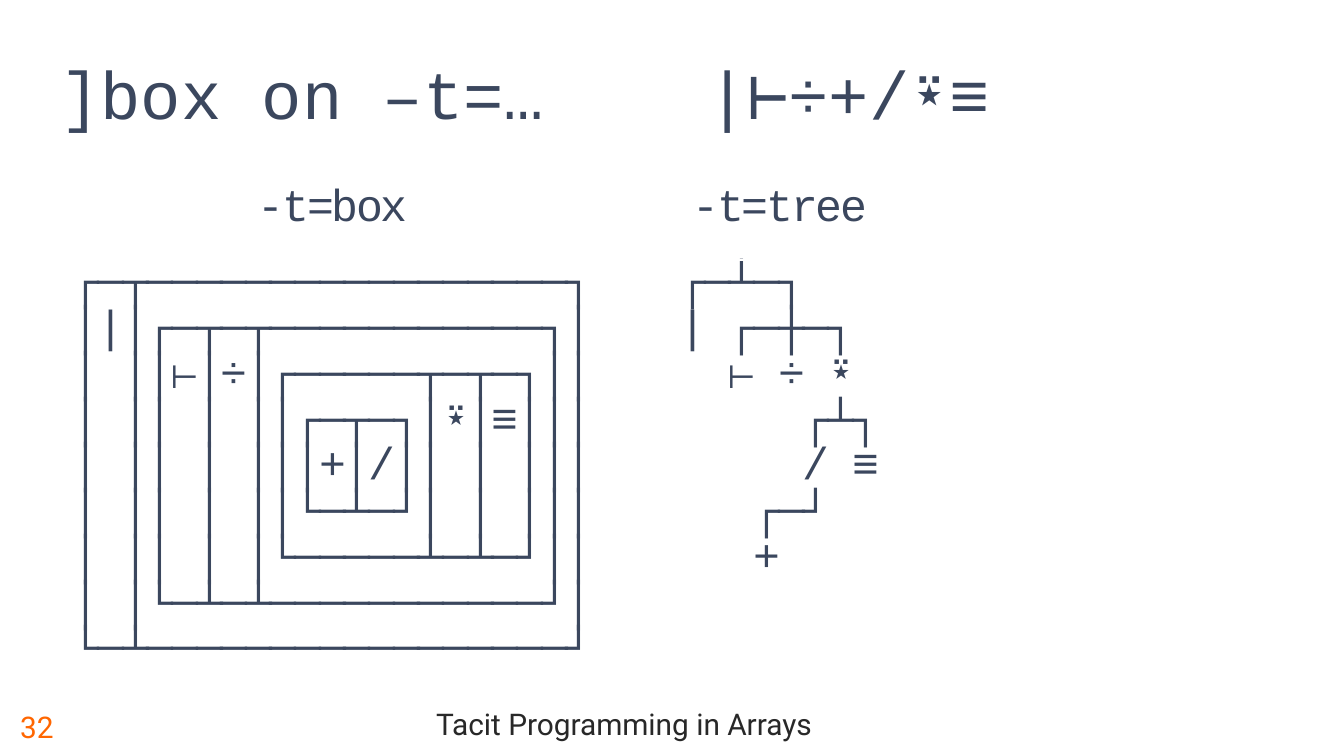
from pptx import Presentation
from pptx import util as u
from pptx.dml.color import RGBColor
from pptx.enum import text
from pptx.oxml import parse_xml
from pptx.oxml.ns import nsdecls

COLORS = {"ink": "3B475E", "footer": "282828", "number": "FF6600"}
CODE_FONT = "Courier New"
BODY_FONT = "Roboto"

BOX_VIEW = """\
┌─┬─────────────────┐
│|│┌─┬─┬───────────┐│
│ ││⊢│÷│┌─────┬─┬─┐││
│ ││ │ ││┌─┬─┐│⍣│≡│││
│ ││ │ │││+│/││ │ │││
│ ││ │ ││└─┴─┘│ │ │││
│ ││ │ │└─────┴─┴─┘││
│ │└─┴─┴───────────┘│
└─┴─────────────────┘""".split("\n")

TREE_VIEW = """\
 ┌─┴─┐
 | ┌─┼─┐
   ⊢ ÷ ⍣
      ┌┴┐
      / ≡
    ┌─┘
    +""".split("\n")


def style(para, font, size, color):
    """Set the font of a whole paragraph."""
    para.font.name = font
    para.font.size = u.Pt(size)
    para.font.color.rgb = RGBColor.from_string(COLORS[color])


def add_label(page, box, words, font, size, color,
              anchor=text.MSO_ANCHOR.MIDDLE, align=text.PP_ALIGN.LEFT, tab=None):
    """Add one line of text in a box given in centimetres."""
    frame = page.shapes.add_textbox(*map(u.Cm, box)).text_frame
    frame.word_wrap = True
    frame.vertical_anchor = anchor
    para = frame.paragraphs[0]
    para.text = words
    para.alignment = align
    if tab:
        para._p.get_or_add_pPr().append(parse_xml(
            f'<a:tabLst {nsdecls("a")}><a:tab pos="{u.Cm(tab)}" algn="r"/></a:tabLst>'))
    style(para, font, size, color)
    return para


def add_title(page, box):
    """Add the command and its right-tabbed expression."""
    para = add_label(page, box, "", CODE_FONT, 36, "ink",
                     text.MSO_ANCHOR.BOTTOM, tab=18.92)
    para.add_run().text = "]box on –t=…\t|⊢÷+/⍣≡"


def fill_cell(cell, lines, align, indent=0):
    """Write lines of tightly spaced code in a table cell."""
    cell.margin_left = u.Cm(indent)
    frame = cell.text_frame
    for index, line in enumerate(lines):
        para = frame.add_paragraph() if index else frame.paragraphs[0]
        para.alignment = align
        para.line_spacing = 0.9
        span = para.add_run()
        span.text = line
        span._r.get_or_add_rPr().set("spc", "-120")
        style(para, CODE_FONT, 24, "ink")


def add_views(page, box):
    """Add the table that sets the box view beside the tree view."""
    table = page.shapes.add_table(2, 3, *map(u.Cm, box)).table
    table.first_row = table.horz_banding = False
    for column, width in zip(table.columns, (10.8, 6.1, 6.8)):
        column.width = u.Cm(width)
    for row, height in zip(table.rows, (1.42, 7.37)):
        row.height = u.Cm(height)
    for cell in table.iter_cells():
        cell.fill.background()
        cell.margin_left = cell.margin_right = 0
        cell.margin_top = cell.margin_bottom = 0
    center = text.PP_ALIGN.CENTER
    fill_cell(table.cell(0, 0), ["-t=box"], center)
    fill_cell(table.cell(0, 1), ["-t=tree"], center)
    fill_cell(table.cell(1, 0), BOX_VIEW, center)
    fill_cell(table.cell(1, 1), TREE_VIEW, text.PP_ALIGN.LEFT, indent=0.69)


def add_footer(page, box):
    """Add the page number and the centred talk title."""
    left, top, width, height = box
    number_width = 1.85
    add_label(page, (left, top, number_width, height), "32", BODY_FONT, 16, "number")
    para = add_label(page, (left + number_width, top, width - number_width, height),
                     "Tacit Programming in Arrays", BODY_FONT, 16, "footer",
                     align=text.PP_ALIGN.CENTER)
    para.line_spacing = 0.8


def main():
    """Build the slide and save the deck."""
    deck = Presentation()
    deck.slide_width, deck.slide_height = u.Cm(25.4), u.Cm(14.29)
    page = deck.slides.add_slide(deck.slide_layouts[6])
    add_footer(page, (0.13, 13.18, 21.48, 1.12))
    add_views(page, (0.89, 3.5, 23.7, 8.79))
    add_title(page, (0.89, 0.74, 18.08, 1.9))
    deck.save("out.pptx")


if __name__ == "__main__":
    main()
